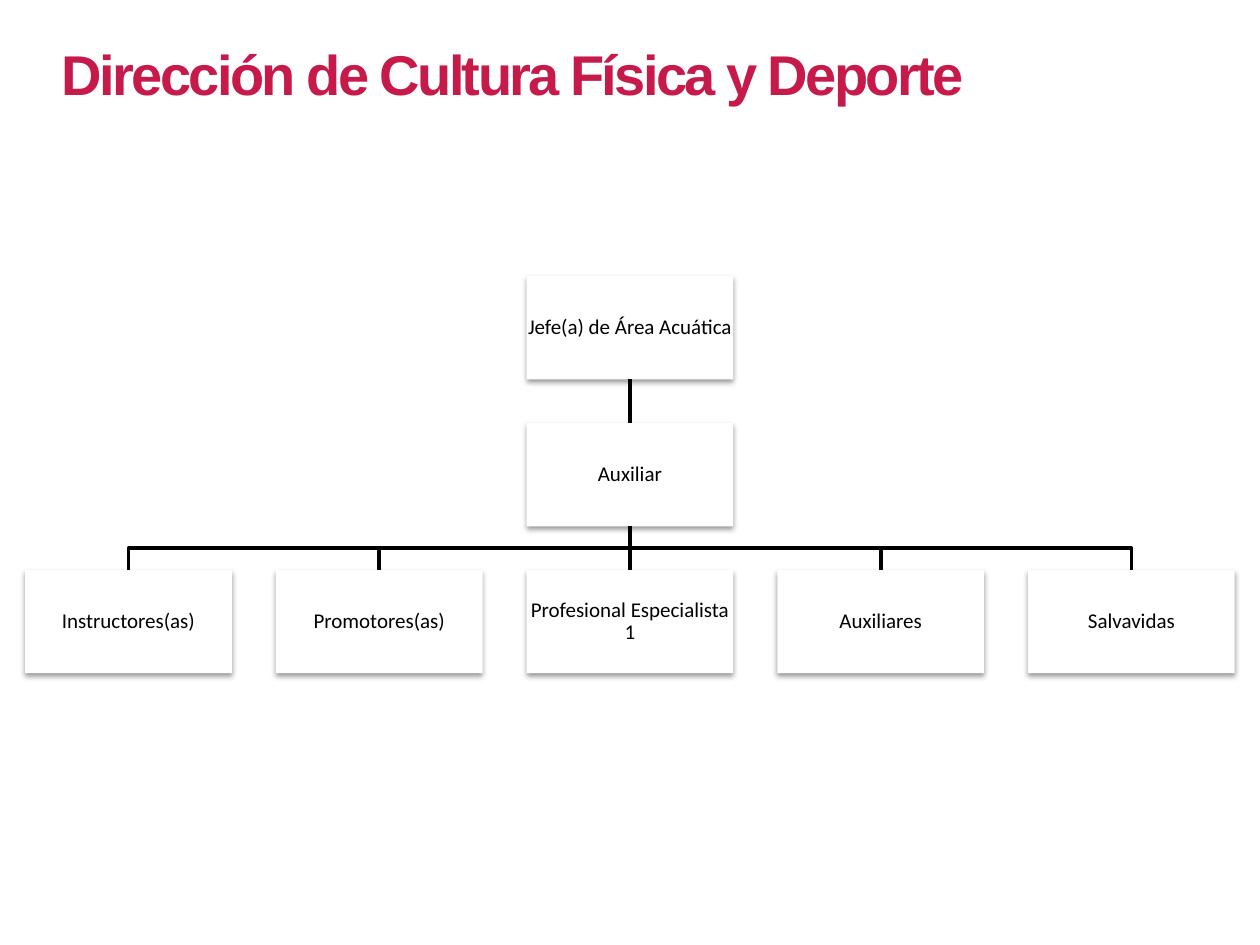
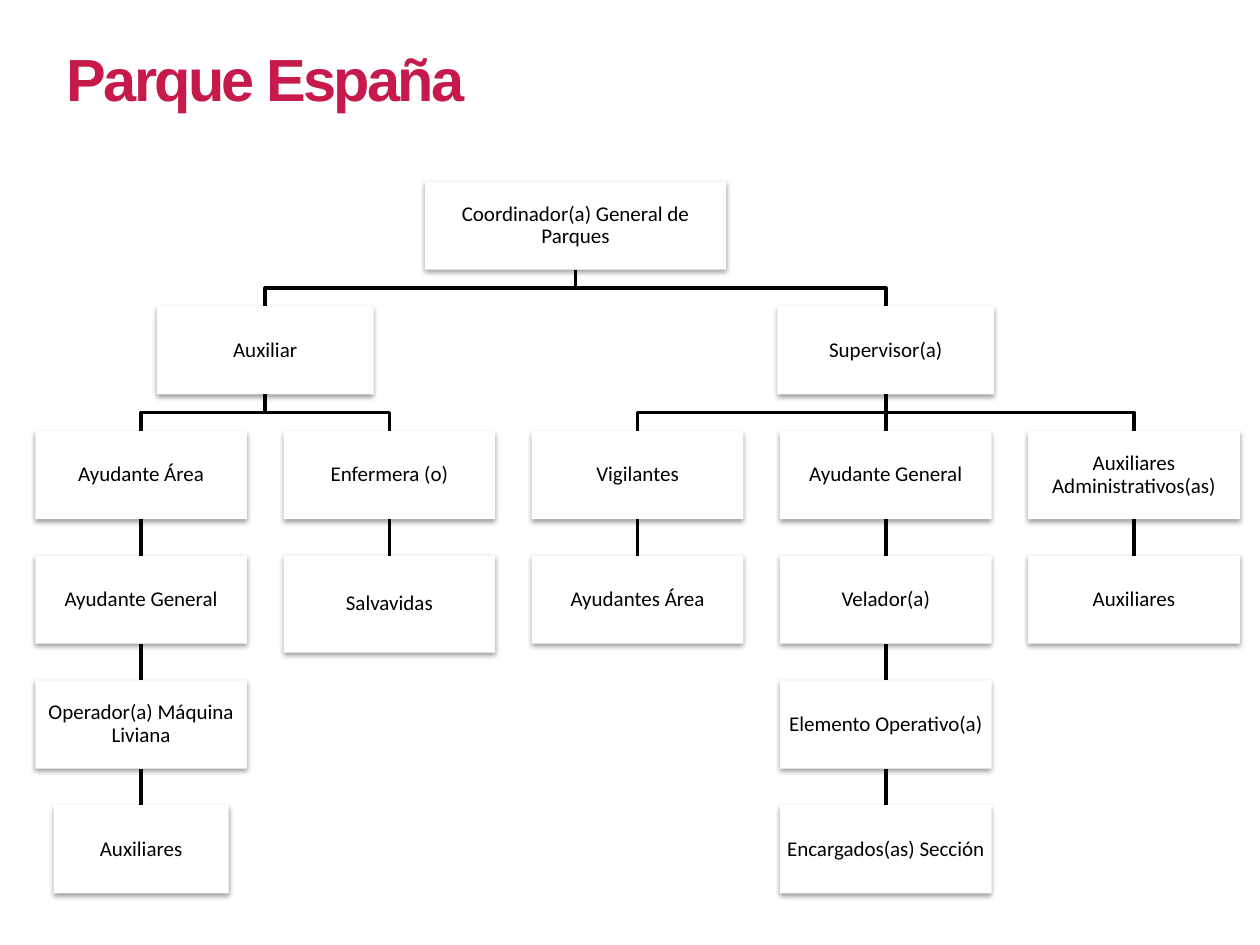
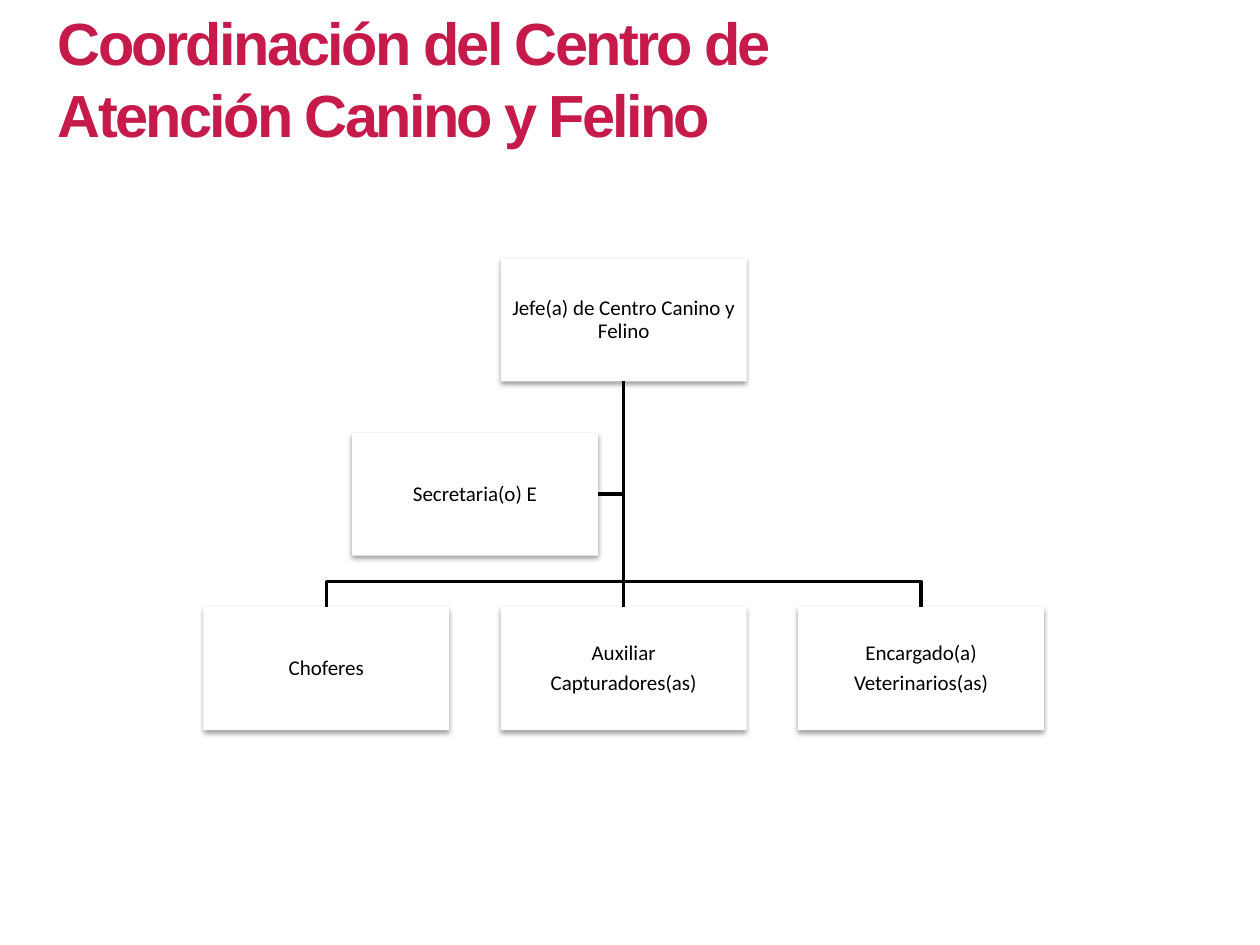
from dataclasses import dataclass

from lxml import etree
from pptx import Presentation
from pptx.dml.color import RGBColor
from pptx.enum.shapes import MSO_CONNECTOR, MSO_SHAPE
from pptx.enum.text import MSO_ANCHOR, MSO_AUTO_SIZE, PP_ALIGN
from pptx.oxml.ns import qn
from pptx.util import Inches, Pt

RECTANGLE = MSO_SHAPE.RECTANGLE
STRAIGHT = MSO_CONNECTOR.STRAIGHT
CENTER, LEFT = PP_ALIGN.CENTER, PP_ALIGN.LEFT
MIDDLE, TOP = MSO_ANCHOR.MIDDLE, MSO_ANCHOR.TOP
GROW = MSO_AUTO_SIZE.SHAPE_TO_FIT_TEXT
TITLE_ONLY = 5
TOP_SIDE, BOTTOM_SIDE = 0, 2
COLORS = {"title": "C51A4A", "box": "FFFFFF", "ink": "000000"}


@dataclass
class Grid:
    """Centre of the first column, top of the first row, steps and box size, in percent of the slide."""
    center: float
    top: float
    column_step: float
    row_step: float
    width: float
    height: float


@dataclass
class Post:
    """A post in the chart, with the posts that report to it."""
    label: str
    column: float
    reports: tuple = ()
    width: float = None
    height: float = None


class OrgDeck:
    """Holds the deck's style, the current page and its grid."""

    def __init__(self):
        self.deck = Presentation()
        self.deck.slide_width, self.deck.slide_height = Inches(10), Inches(7.5)
        self.page = self.grid = None

    def x(self, percent):
        """Turn a percentage of the slide's width into a length."""
        return round(self.deck.slide_width * percent / 100)

    def y(self, percent):
        """Turn a percentage of the slide's height into a length."""
        return round(self.deck.slide_height * percent / 100)

    def color(self, name):
        """Return a named colour."""
        return RGBColor.from_string(COLORS[name])

    def style(self, paragraph, font, size, color, align):
        """Format a whole paragraph."""
        paragraph.alignment = align
        paragraph.font.name = font
        paragraph.font.size = Pt(size)
        paragraph.font.color.rgb = self.color(color)

    def add_page(self, title, area, size, grid):
        """Start a page with its title and its chart grid."""
        self.page = self.deck.slides.add_slide(self.deck.slide_layouts[TITLE_ONLY])
        self.grid = grid
        left, top, width, height = area
        holder = self.page.shapes.title
        holder.left, holder.top = self.x(left), self.y(top)
        holder.width, holder.height = self.x(width), self.y(height)
        frame = holder.text_frame
        frame.text = title
        frame.word_wrap, frame.auto_size, frame.vertical_anchor = True, GROW, TOP
        paragraph = frame.paragraphs[0]
        self.style(paragraph, "Arial", size, "title", LEFT)
        paragraph.font.bold = True
        paragraph.runs[0]._r.get_or_add_rPr().set("spc", "-150")

    def shadow(self, shape):
        """Give a shape a soft shadow below it."""
        shape.shadow.inherit = False
        effects = shape._element.spPr.find(qn("a:effectLst"))
        outer = etree.SubElement(effects, qn("a:outerShdw"), blurRad=str(Pt(3.1)),
                                 dist=str(Pt(1.6)), dir="5400000", rotWithShape="0")
        tint = etree.SubElement(outer, qn("a:srgbClr"), val=COLORS["ink"])
        etree.SubElement(tint, qn("a:alpha"), val="38000")

    def box(self, label, column, row, width=None, height=None):
        """Place a box centred on a grid column."""
        grid = self.grid
        width, height = width or grid.width, height or grid.height
        left = grid.center + column * grid.column_step - width / 2
        box = self.page.shapes.add_shape(
            RECTANGLE, self.x(left), self.y(grid.top + row * grid.row_step),
            self.x(width), self.y(height))
        box.fill.solid()
        box.fill.fore_color.rgb = self.color("box")
        box.line.fill.background()
        self.shadow(box)
        frame = box.text_frame
        frame.text = label
        frame.word_wrap, frame.vertical_anchor = True, MIDDLE
        frame.margin_left = frame.margin_right = Inches(0.01)
        frame.margin_top = frame.margin_bottom = Inches(0.01)
        for paragraph in frame.paragraphs:
            paragraph.line_spacing, paragraph.space_after = 0.9, Pt(4.2)
            self.style(paragraph, "Calibri", 12, "ink", CENTER)
        return box

    def ink(self, line):
        """Draw a line in the chart's stroke."""
        line.color.rgb = self.color("ink")
        line.width = Pt(2)

    def route(self, *points):
        """Draw an open line through points."""
        builder = self.page.shapes.build_freeform(*points[0])
        builder.add_line_segments(points[1:], close=False)
        route = builder.convert_to_shape()
        route.fill.background()
        route.shadow.inherit = False
        self.ink(route.line)

    def link(self, upper, lower):
        """Join a box to one below it, with a bend halfway up the row gap."""
        start = upper.left + upper.width // 2, upper.top + upper.height
        end = lower.left + lower.width // 2, lower.top
        if abs(start[0] - end[0]) < Pt(1):
            connector = self.page.shapes.add_connector(STRAIGHT, *start, *end)
            connector.begin_connect(upper, BOTTOM_SIDE)
            connector.end_connect(lower, TOP_SIDE)
            etree.SubElement(connector._element.spPr, qn("a:effectLst"))
            self.ink(connector.line)
        else:
            bend = lower.top - self.y(self.grid.row_step - self.grid.height) // 2
            self.route(start, (start[0], bend), (end[0], bend), end)

    def link_aside(self, upper, aide):
        """Join a box to an aide on the left of its stem."""
        stem = upper.left + upper.width // 2
        middle = aide.top + aide.height // 2
        self.route((stem, upper.top + upper.height), (stem, middle),
                   (aide.left + aide.width, middle))

    def tree(self, post, row=0, step=1):
        """Draw a post and everyone below it, and return its box."""
        box = self.box(post.label, post.column, row, post.width, post.height)
        for report in post.reports:
            self.link(box, self.tree(report, row + step))
        return box


def chain(column, *labels):
    """Return posts that report to each other in one column."""
    first, *rest = labels
    return Post(first, column, (chain(column, *rest),) if rest else ())


def team(*labels):
    """Return posts side by side, one per column."""
    return tuple(Post(label, column) for column, label in enumerate(labels))


def main():
    """Build the three charts."""
    org = OrgDeck()

    org.add_page("Dirección de Cultura Física y Deporte", (3.9, 3.5, 76.9, 8.5), 32,
                 Grid(10.2, 29.2, 19.9, 15.55, 16.4, 10.95))
    aquatic_team = team("Instructores(as)", "Promotores(as)", "Profesional Especialista 1",
                        "Auxiliares", "Salvavidas")
    org.tree(Post("Jefe(a) de Área Acuática", 2, (Post("Auxiliar", 2, aquatic_team),)))

    org.add_page("Parque España", (4.3, 3.75, 35.4, 9.2), 34,
                 Grid(11.2, 19.2, 19.7, 13.2, 16.8, 9.33))
    light_machine = Post("Operador(a) Máquina Liviana", 0,
                         (Post("Auxiliares", 0, width=13.9),))
    assistant = Post("Auxiliar", 0.5, (
        Post("Ayudante Área", 0, (Post("Ayudante General", 0, (light_machine,)),)),
        Post("Enfermera (o)", 1, (Post("Salvavidas", 1, height=10.27),)),
    ), width=17.2)
    supervisor = Post("Supervisor(a)", 3, (
        chain(2, "Vigilantes", "Ayudantes Área"),
        chain(3, "Ayudante General", "Velador(a)", "Elemento Operativo(a)",
              "Encargados(as) Sección"),
        chain(4, "Auxiliares Administrativos(as)", "Auxiliares"),
    ), width=17.2)
    org.tree(Post("Coordinador(a) General de Parques", 1.75, (assistant, supervisor),
                  width=23.9))

    org.add_page("Coordinación del Centro de Atención Canino y Felino",
                 (3.6, 0, 68.1, 17.1), 34,
                 Grid(25.9, 27.35, 23.6, 18.45, 19.5, 13))
    shelter_team = team("Choferes", "Auxiliar\nCapturadores(as)",
                        "Encargado(a)\nVeterinarios(as)")
    head = org.tree(Post("Jefe(a) de Centro Canino y Felino", 1, shelter_team), step=2)
    org.link_aside(head, org.box("Secretaria(o) E", 0.5, 1))

    org.deck.save("out.pptx")


if __name__ == "__main__":
    main()
